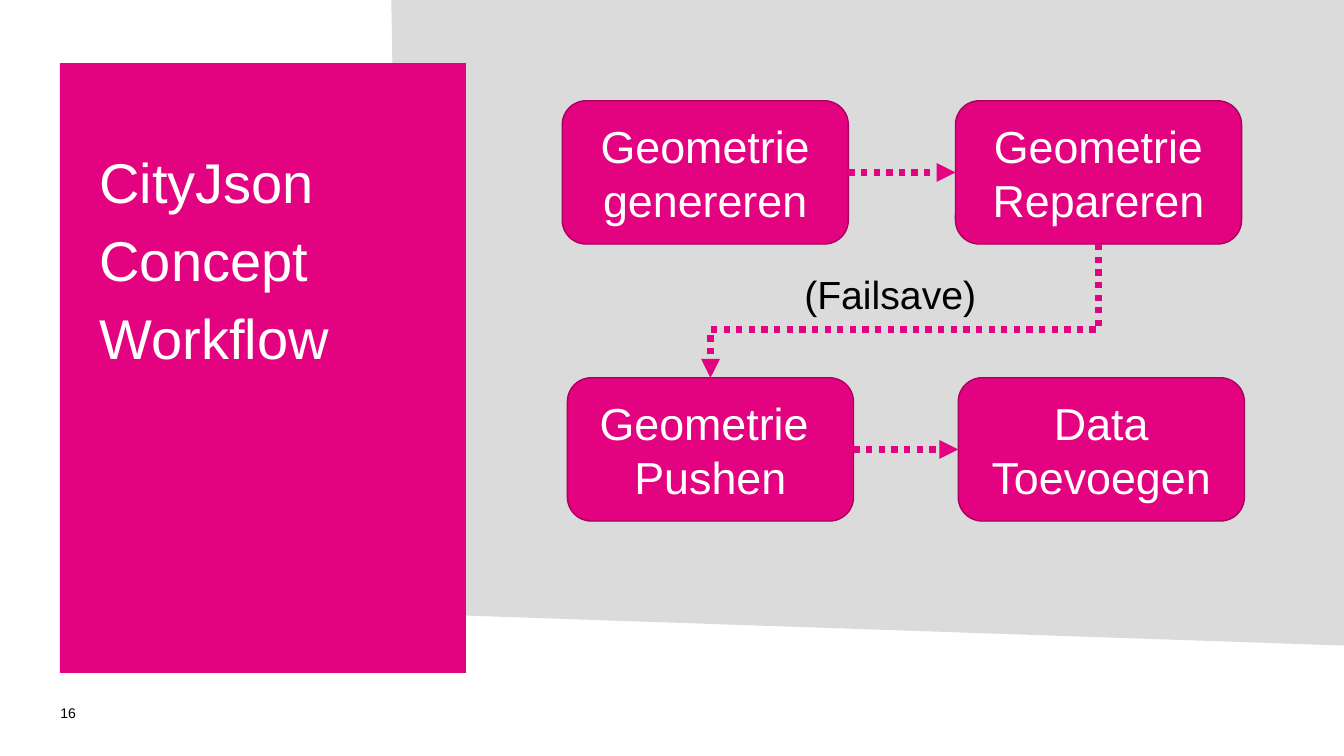
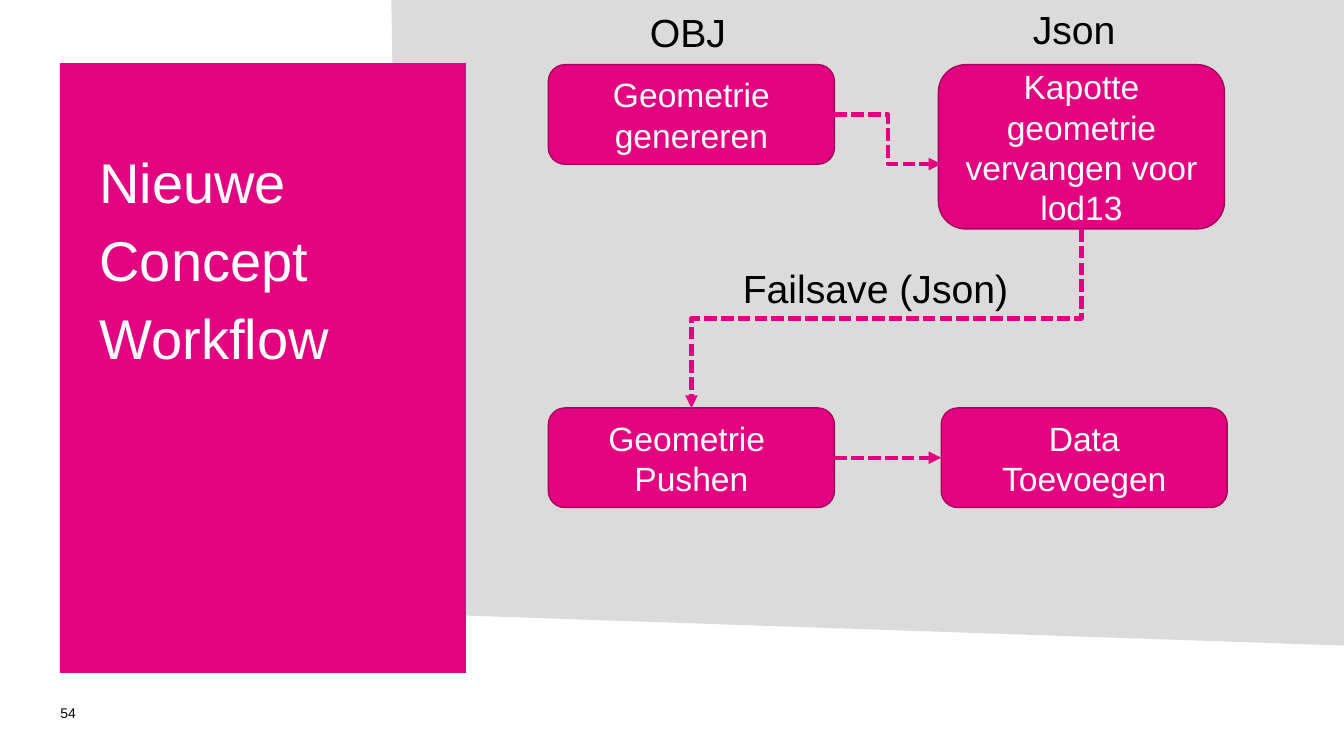
from dataclasses import dataclass

from lxml import etree
from pptx import Presentation
from pptx import util as u
from pptx.dml.color import RGBColor
from pptx.enum import dml, shapes, text
from pptx.oxml.ns import qn
from pptx.shapes.autoshape import Shape
from pptx.shapes.connector import Connector
from pptx.slide import Slide
from pptx.text.text import TextFrame

MAGENTA = RGBColor(0xE3, 0x02, 0x7F)
DARK_MAGENTA = RGBColor(0xA8, 0x01, 0x5E)
GREY = RGBColor(0xDB, 0xDB, 0xDB)
WHITE = RGBColor(0xFF, 0xFF, 0xFF)
BLACK = RGBColor(0x00, 0x00, 0x00)
FONT = "Arial"
STEP_WIDTH = 7.21
BACKDROP = [(9.88, 0), (33.87, 0), (33.87, 16.25), (10.13, 15.44)]
TOP, LEFT, BOTTOM, RIGHT = range(4)


@dataclass(frozen=True)
class Step:
    lines: tuple[str, ...]
    left: float
    top: float
    height: float


@dataclass(frozen=True)
class Label:
    caption: str
    left: float
    top: float
    width: float


@dataclass(frozen=True)
class ArrowStyle:
    weight: float
    dash: dml.MSO_LINE


@dataclass(frozen=True)
class Workflow:
    title: tuple[str, ...]
    number: str
    steps: tuple[Step, ...]
    labels: tuple[Label, ...]
    step_size: int
    arrow: ArrowStyle
    return_bend: float
    first_arrow_drop: float = 0


WORKFLOWS = (
    Workflow(
        title=("CityJson", "Concept", "Workflow"),
        number="16",
        steps=(
            Step(("Geometrie", "genereren"), 14.17, 2.54, 3.61),
            Step(("Geometrie", "Repareren"), 24.08, 2.54, 3.61),
            Step(("Geometrie ", "Pushen"), 14.3, 9.52, 3.61),
            Step(("Data", "Toevoegen"), 24.15, 9.52, 3.61),
        ),
        labels=(Label("(Failsave)", 20.02, 6.68, 4.93),),
        step_size=32,
        arrow=ArrowStyle(4.5, dml.MSO_LINE.ROUND_DOT),
        return_bend=0.64,
    ),
    Workflow(
        title=("Nieuwe", "Concept", "Workflow"),
        number="54",
        steps=(
            Step(("Geometrie", "genereren"), 13.82, 1.63, 2.51),
            Step(("Kapotte geometrie vervangen voor lod13",), 23.65, 1.63, 4.14),
            Step(("Geometrie ", "Pushen"), 13.82, 10.28, 2.51),
            Step(("Data", "Toevoegen"), 23.72, 10.28, 2.51),
        ),
        labels=(
            Label("OBJ", 16.13, 0.08, 2.59),
            Label("Json", 25.78, 0.01, 3.15),
            Label("Failsave (Json)", 18.47, 6.53, 7.75),
        ),
        step_size=24,
        arrow=ArrowStyle(3, dml.MSO_LINE.SQUARE_DOT),
        return_bend=0.5,
        first_arrow_drop=1.25,
    ),
)


def write(frame: TextFrame, lines: tuple[str, ...], size: int, color: RGBColor,
          align: text.PP_ALIGN = text.PP_ALIGN.LEFT) -> None:
    frame.word_wrap = True
    for index, line in enumerate(lines):
        para = frame.add_paragraph() if index else frame.paragraphs[0]
        para.text = line
        para.alignment = align
        para.font.name = FONT
        para.font.size = u.Pt(size)
        para.font.color.rgb = color


def set_insets(frame: TextFrame, side: float, top: float) -> None:
    frame.margin_left = frame.margin_right = u.Cm(side)
    frame.margin_top = frame.margin_bottom = u.Cm(top)


def paint(shape: Shape, fill: RGBColor, outline: RGBColor | None = None) -> None:
    shape.shadow.inherit = False
    shape.fill.solid()
    shape.fill.fore_color.rgb = fill
    if outline is None:
        shape.line.fill.background()
    else:
        shape.line.color.rgb = outline
        shape.line.width = u.Pt(1)


def add_frame(page: Slide, title: tuple[str, ...], number: str) -> None:
    corners = [(u.Cm(x), u.Cm(y)) for x, y in BACKDROP]
    outline = page.shapes.build_freeform(*corners[0])
    outline.add_line_segments(corners[1:], close=True)
    paint(outline.convert_to_shape(), GREY, GREY)

    box = page.shapes.add_textbox(u.Cm(1.52), u.Cm(17.78), u.Cm(0.74), u.Cm(0.36))
    set_insets(box.text_frame, 0, 0)
    box.text_frame.vertical_anchor = text.MSO_ANCHOR.MIDDLE
    write(box.text_frame, (number,), 10, BLACK)

    panel = page.shapes.add_shape(shapes.MSO_SHAPE.RECTANGLE,
                                  u.Cm(1.51), u.Cm(1.59), u.Cm(10.23), u.Cm(15.37))
    paint(panel, MAGENTA)
    frame = panel.text_frame
    set_insets(frame, 1, 2.05)
    frame.vertical_anchor = text.MSO_ANCHOR.TOP
    write(frame, title, 40, WHITE)
    for index, para in enumerate(frame.paragraphs):
        para.line_spacing = 1.04
        para.space_before = u.Pt(6 if index else 0)


def add_step(page: Slide, step: Step, size: int) -> Shape:
    box = page.shapes.add_shape(shapes.MSO_SHAPE.ROUNDED_RECTANGLE, u.Cm(step.left),
                                u.Cm(step.top), u.Cm(STEP_WIDTH), u.Cm(step.height))
    paint(box, MAGENTA, DARK_MAGENTA)
    box.text_frame.vertical_anchor = text.MSO_ANCHOR.MIDDLE
    write(box.text_frame, step.lines, size, WHITE, text.PP_ALIGN.CENTER)
    return box


def add_label(page: Slide, label: Label) -> None:
    box = page.shapes.add_textbox(u.Cm(label.left), u.Cm(label.top),
                                  u.Cm(label.width), u.Cm(1.45))
    write(box.text_frame, (label.caption,), 28, BLACK)


def style_arrow(arrow: Connector, style: ArrowStyle) -> None:
    arrow.line.color.rgb = MAGENTA
    arrow.line.width = u.Pt(style.weight)
    arrow.line.dash_style = style.dash
    properties = arrow.element.spPr
    tail = etree.SubElement(properties.find(qn("a:ln")), qn("a:tailEnd"))
    tail.set("type", "triangle")
    etree.SubElement(properties, qn("a:effectLst"))


def add_straight_arrow(page: Slide, start: Shape, end: Shape, style: ArrowStyle) -> None:
    arrow = page.shapes.add_connector(shapes.MSO_CONNECTOR.STRAIGHT, 0, 0, 0, 0)
    arrow.begin_connect(start, RIGHT)
    arrow.end_connect(end, LEFT)
    style_arrow(arrow, style)


def add_stepped_arrow(page: Slide, start: Shape, end: Shape, drop: float,
                      style: ArrowStyle) -> None:
    y = start.top + start.height // 2
    arrow = page.shapes.add_connector(shapes.MSO_CONNECTOR.ELBOW, start.left + start.width, y,
                                      end.left + u.Cm(0.07), y + u.Cm(drop))
    style_arrow(arrow, style)


def add_return_arrow(page: Slide, start: Shape, end: Shape, bend: float,
                     style: ArrowStyle) -> None:
    start_x, start_y = start.left + start.width // 2, start.top + start.height
    end_x, end_y = end.left + end.width // 2, end.top
    middle_x, middle_y = (start_x + end_x) // 2, (start_y + end_y) // 2
    half_drop, half_span = (end_y - start_y) // 2, (start_x - end_x) // 2
    arrow = page.shapes.add_connector(shapes.MSO_CONNECTOR.ELBOW,
                                      middle_x - half_drop, middle_y - half_span,
                                      middle_x + half_drop, middle_y + half_span)
    properties = arrow.element.spPr
    properties.find(qn("a:xfrm")).set("rot", str(90 * 60000))
    geometry = properties.find(qn("a:prstGeom"))
    guides = geometry.find(qn("a:avLst"))
    if guides is None:
        guides = etree.SubElement(geometry, qn("a:avLst"))
    guide = etree.SubElement(guides, qn("a:gd"))
    guide.set("name", "adj1")
    guide.set("fmla", f"val {round(bend * 100000)}")
    style_arrow(arrow, style)


def add_workflow(page: Slide, flow: Workflow) -> None:
    add_frame(page, flow.title, flow.number)
    first, second, third, fourth = [add_step(page, step, flow.step_size) for step in flow.steps]
    if flow.first_arrow_drop:
        add_stepped_arrow(page, first, second, flow.first_arrow_drop, flow.arrow)
    else:
        add_straight_arrow(page, first, second, flow.arrow)
    add_return_arrow(page, second, third, flow.return_bend, flow.arrow)
    add_straight_arrow(page, third, fourth, flow.arrow)
    for label in flow.labels:
        add_label(page, label)


def main() -> None:
    deck = Presentation()
    deck.slide_width, deck.slide_height = u.Cm(33.87), u.Cm(19.05)
    for flow in WORKFLOWS:
        add_workflow(deck.slides.add_slide(deck.slide_layouts[6]), flow)
    deck.save("out.pptx")


if __name__ == "__main__":
    main()
